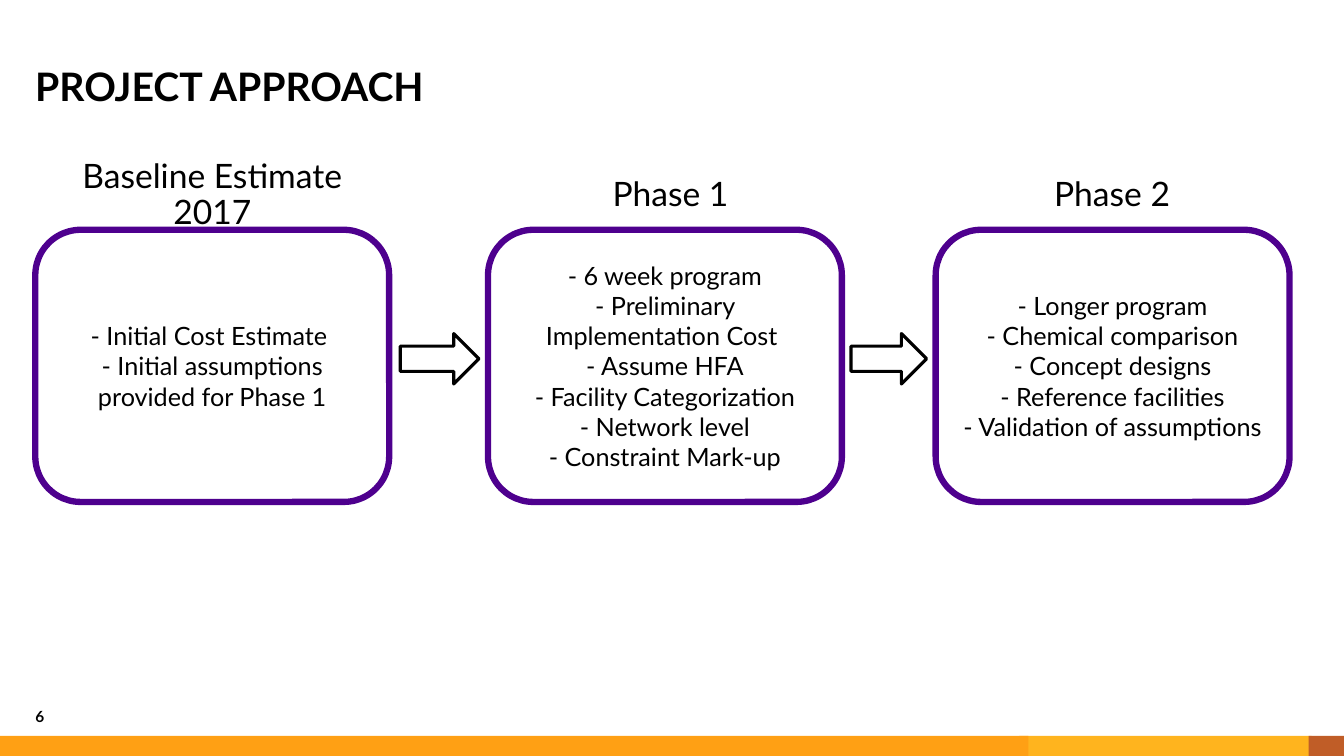
"""Build the project approach slide: three phases joined by arrows."""
from pptx import Presentation
from pptx.dml.color import RGBColor
from pptx.enum import shapes, text
from pptx.util import Inches, Pt

BLACK = RGBColor(0x00, 0x00, 0x00)
PURPLE = RGBColor(0x4E, 0x00, 0x8E)
ORANGE = RGBColor(0xFF, 0xA0, 0x14)
AMBER = RGBColor(0xFF, 0xB4, 0x1E)
RUST = RGBColor(0xC0, 0x5D, 0x27)
CENTER = text.PP_ALIGN.CENTER
MIDDLE = text.MSO_ANCHOR.MIDDLE

deck = Presentation()
deck.slide_width, deck.slide_height = Inches(13.33), Inches(7.5)
page = deck.slides.add_slide(deck.slide_layouts[6])


def write(box, lines, size, bold=False, align=None, anchor=MIDDLE, spacing=None):
    frame = box.text_frame
    frame.word_wrap = True
    frame.vertical_anchor = anchor
    frame.text = "\n".join(lines)
    for paragraph in frame.paragraphs:
        paragraph.alignment = align
        paragraph.line_spacing = spacing
        paragraph.font.name = "Lato"
        paragraph.font.size = Pt(size)
        paragraph.font.bold = bold
        paragraph.font.color.rgb = BLACK


def add_label(left, top, width, height, line, size, **style):
    box = page.shapes.add_textbox(Inches(left), Inches(top), Inches(width), Inches(height))
    frame = box.text_frame
    frame.margin_left = frame.margin_top = frame.margin_right = frame.margin_bottom = 0
    write(box, [line], size, **style)


for left, width, color in [(10.11, 2.9, AMBER), (12.98, 0.35, RUST), (0, 10.2, ORANGE)]:
    band = page.shapes.add_shape(
        shapes.MSO_SHAPE.RECTANGLE, Inches(left), Inches(7.3), Inches(width), Inches(0.2))
    band.shadow.inherit = False
    band.fill.solid()
    band.fill.fore_color.rgb = color
    band.line.fill.background()

add_label(0.35, 6.9, 0.85, 0.3, "6", 11, bold=True, anchor=text.MSO_ANCHOR.BOTTOM)
add_label(0.35, 0.53, 12.6, 0.7, "PROJECT APPROACH", 28, bold=True, spacing=0.9)

phases = [
    (0.35, "Baseline Estimate 2017", 0.4, 3.41, [
        "- Initial Cost Estimate ",
        "- Initial assumptions provided for Phase 1",
    ]),
    (4.84, "Phase 1", 6.04, 1.22, [
        "- 6 week program",
        "- Preliminary Implementation Cost ",
        "- Assume HFA",
        "- Facility Categorization",
        "- Network level",
        "- Constraint Mark-up",
    ]),
    (9.28, "Phase 2", 10.42, 1.22, [
        "- Longer program",
        "- Chemical comparison",
        "- Concept designs",
        "- Reference facilities",
        "- Validation of assumptions",
    ]),
]
for left, heading, heading_left, heading_width, lines in phases:
    card = page.shapes.add_shape(
        shapes.MSO_SHAPE.ROUNDED_RECTANGLE, Inches(left), Inches(2.28), Inches(3.51), Inches(2.7))
    card.shadow.inherit = False
    card.fill.background()
    card.line.color.rgb = PURPLE
    card.line.width = Pt(4.5)
    write(card, lines, 18, align=CENTER)
    add_label(heading_left, 1.68, heading_width, 0.52, heading, 24, align=CENTER, spacing=0.9)

for left, width in [(3.97, 0.78), (8.44, 0.75)]:
    arrow = page.shapes.add_shape(
        shapes.MSO_SHAPE.RIGHT_ARROW, Inches(left), Inches(3.31), Inches(width), Inches(0.5))
    arrow.shadow.inherit = False
    arrow.fill.background()
    arrow.line.color.rgb = BLACK
    arrow.line.width = Pt(2.25)

deck.save("out.pptx")
